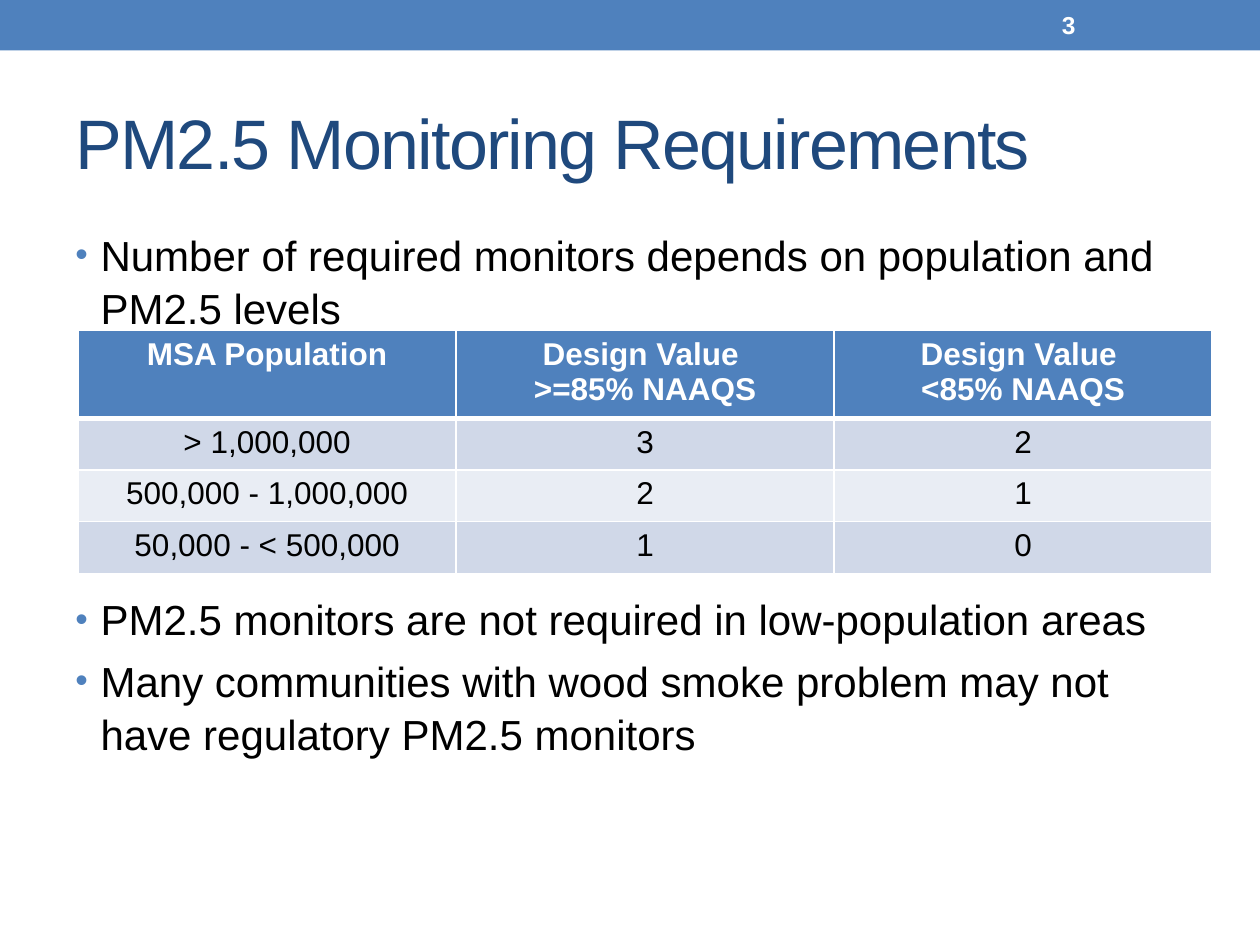
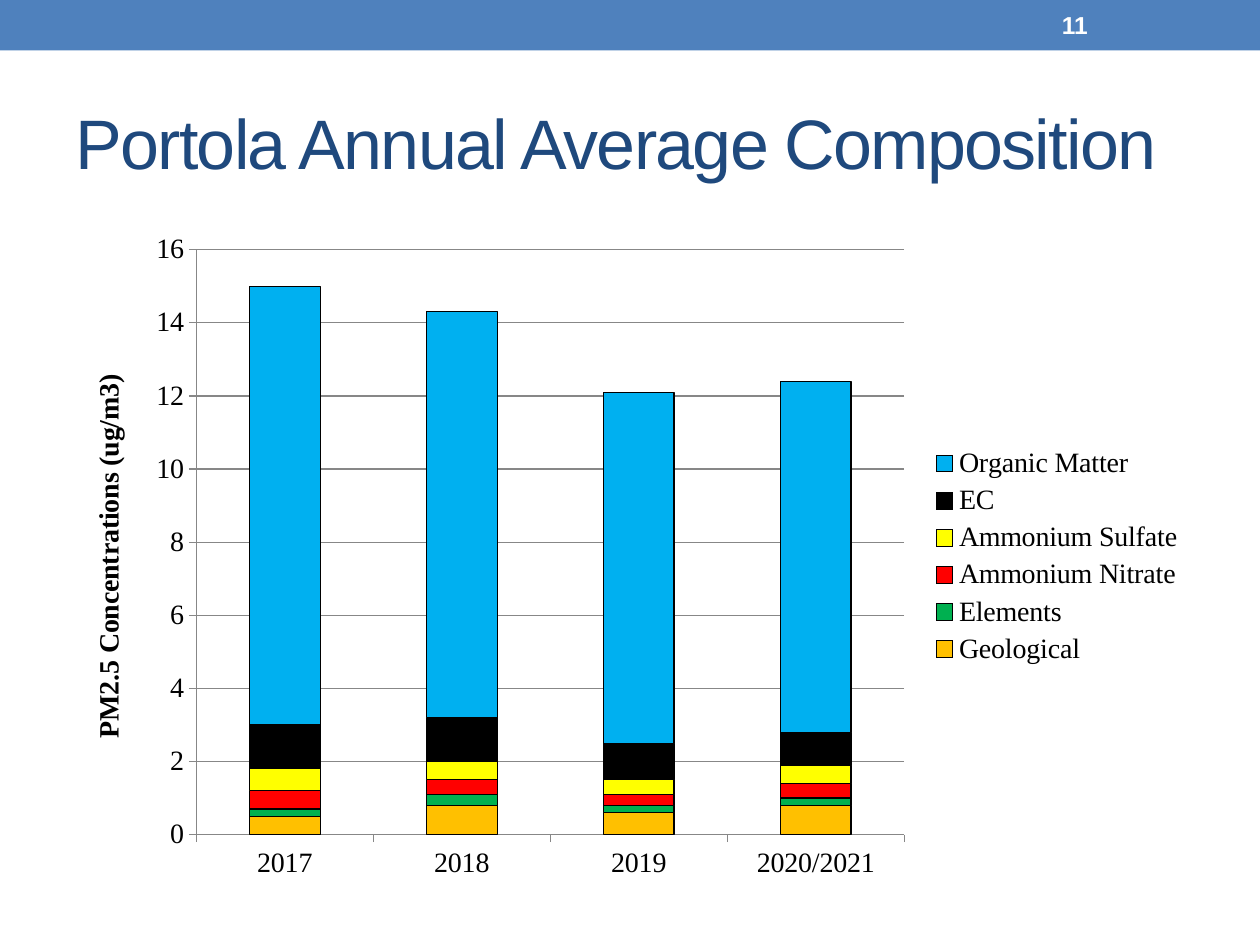
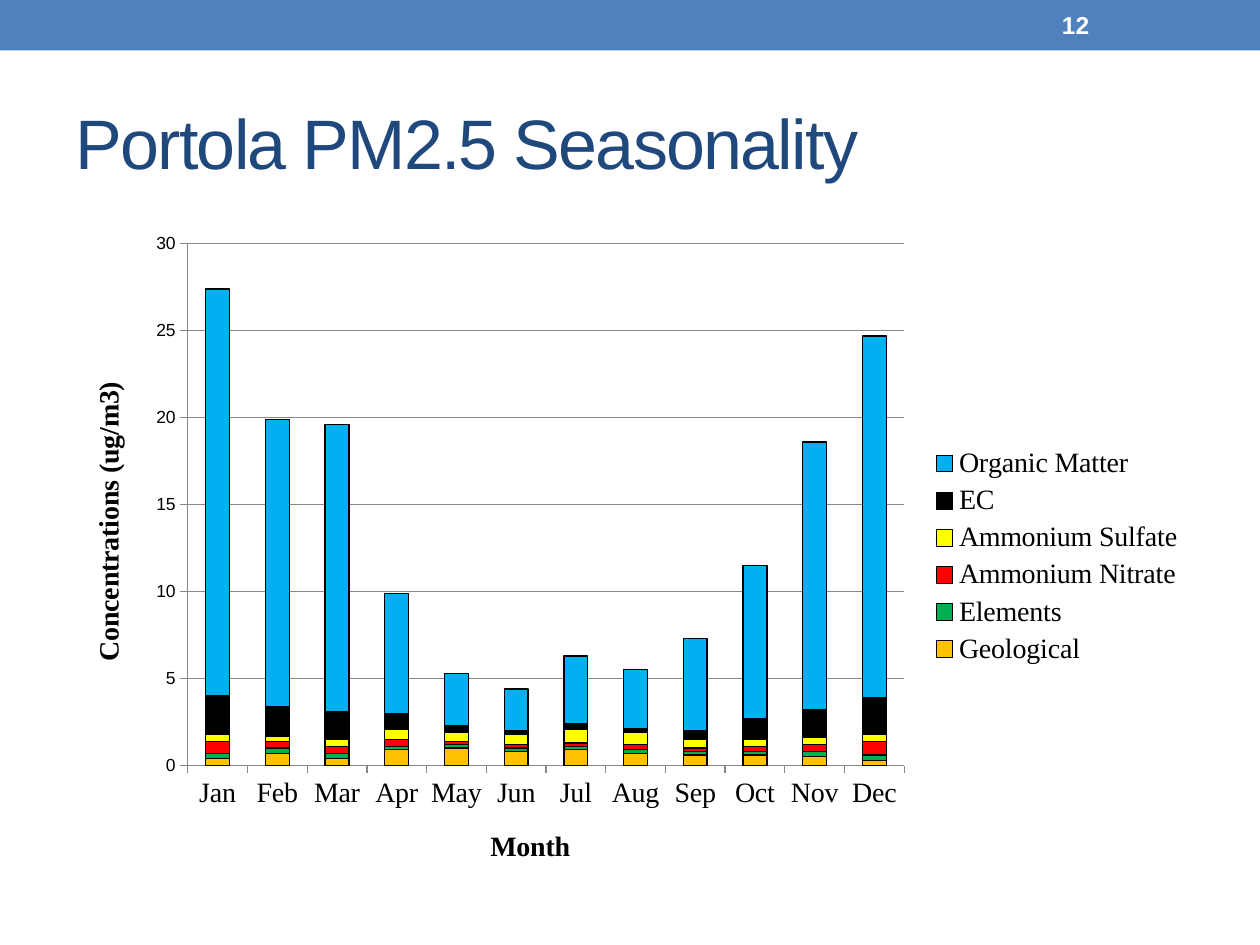
"""Build three slides on PM2.5 monitoring and its composition in Portola."""
from lxml import etree
from pptx import Presentation
from pptx import util as u
from pptx.chart import data
from pptx.dml import color
from pptx.enum import chart as charts
from pptx.enum import shapes, text
from pptx.oxml import ns

PX = 9144
BLUE, NAVY, BLACK, WHITE, GRAY = "4F81BD", "1F497D", "000000", "FFFFFF", "878787"
ROW_FILLS = ["D0D8E8", "E9EDF4"]

TITLE_FONT = {"name": "Arial", "size": u.Pt(40), "bold": False}
BODY_FONT = {"name": "Arial", "size": u.Pt(24)}
NUMBER_FONT = {"name": "Arial", "size": u.Pt(14), "bold": True}
HEADER_FONT = {"name": "Arial", "size": u.Pt(18), "bold": True}
CELL_FONT = {"name": "Arial", "size": u.Pt(18), "bold": False}
CHART_FONT = {"name": "Arial", "size": u.Pt(10)}
SERIF_FONT = {"name": "Times New Roman", "size": u.Pt(16), "bold": False}
AXIS_TITLE_FONT = {**SERIF_FONT, "bold": True}

CONTENT = (50, 175, 900, 533)
SERIES = [
    ("Geological", "FFC000"),
    ("Elements", "00B050"),
    ("Ammonium Nitrate", "FF0000"),
    ("Ammonium Sulfate", "FFFF00"),
    ("EC", BLACK),
    ("Organic Matter", "00B0F0"),
]

BULLETS = [
    ("Number of required monitors depends on population and PM2.5 levels", 4.8),
    ("PM2.5 monitors are not required in low-population areas", 148),
    ("Many communities with wood smoke problem may not have regulatory PM2.5 monitors", 4.8),
]
MONITORS = [
    ["MSA Population", "Design Value \v>=85% NAAQS", "Design Value \v<85% NAAQS"],
    ["> 1,000,000", "3", "2"],
    ["500,000 - 1,000,000", "2", "1"],
    ["50,000 - < 500,000", "1", "0"],
]
YEARS = ["2017", "2018", "2019", "2020/2021"]
YEARLY = [
    [0.5, 0.8, 0.6, 0.8],
    [0.2, 0.3, 0.2, 0.2],
    [0.5, 0.4, 0.3, 0.4],
    [0.6, 0.5, 0.4, 0.5],
    [1.2, 1.2, 1, 0.9],
    [12, 11.1, 9.6, 9.6],
]
MONTHS = "Jan Feb Mar Apr May Jun Jul Aug Sep Oct Nov Dec".split()
MONTHLY = [
    [0.4, 0.7, 0.4, 0.9, 1, 0.8, 0.9, 0.7, 0.6, 0.6, 0.5, 0.3],
    [0.3, 0.3, 0.3, 0.2, 0.2, 0.2, 0.2, 0.2, 0.2, 0.2, 0.3, 0.3],
    [0.7, 0.4, 0.4, 0.4, 0.2, 0.2, 0.2, 0.3, 0.2, 0.3, 0.4, 0.8],
    [0.4, 0.3, 0.4, 0.6, 0.5, 0.6, 0.8, 0.7, 0.5, 0.4, 0.4, 0.4],
    [2.2, 1.7, 1.6, 0.9, 0.4, 0.2, 0.3, 0.2, 0.5, 1.2, 1.6, 2.1],
    [23.4, 16.5, 16.5, 6.9, 3, 2.4, 3.9, 3.4, 5.3, 8.8, 15.4, 20.8],
]


def px(*lengths):
    return [u.Emu(length * PX) for length in lengths]


def rgb(value):
    return color.RGBColor.from_string(value)


def apply(target, values):
    for name, value in values.items():
        setattr(target, name, value)


def set_font(font, values, tint=BLACK):
    apply(font, values)
    font.color.rgb = rgb(tint)


def paint(fill, tint):
    fill.solid()
    fill.fore_color.rgb = rgb(tint)


def draw_line(line, tint, width):
    line.color.rgb = rgb(tint)
    line.width = u.Pt(width)


def add_node(parent, tag, **attributes):
    return etree.SubElement(parent, ns.qn(tag), attributes)


class Builder:
    def __init__(self):
        self.deck = Presentation()
        self.deck.slide_width, self.deck.slide_height = px(1000, 750)
        self.page = None

    def start_page(self, heading, number):
        self.page = self.deck.slides.add_slide(self.deck.slide_layouts[5])
        self.band()
        self.title(heading)
        self.number(number)

    def band(self):
        band = self.page.shapes.add_shape(shapes.MSO_SHAPE.RECTANGLE, *px(0, 0, 1000, 40))
        band.shadow.inherit = False
        paint(band.fill, BLUE)
        band.line.fill.background()

    def title(self, heading):
        box = self.page.shapes.title
        apply(box, dict(zip(("left", "top", "width", "height"), px(50, 58, 900, 108))))
        frame = box.text_frame
        frame.text = heading
        apply(frame, {"vertical_anchor": text.MSO_ANCHOR.MIDDLE,
                      "auto_size": text.MSO_AUTO_SIZE.NONE, "word_wrap": True})
        para = frame.paragraphs[0]
        para.alignment = text.PP_ALIGN.LEFT
        span = para.runs[0]
        set_font(span.font, TITLE_FONT, NAVY)
        span.font._element.set("spc", "-100")

    def text_box(self, place, anchor):
        frame = self.page.shapes.add_textbox(*px(*place)).text_frame
        apply(frame, {"word_wrap": True, "vertical_anchor": anchor})
        return frame

    def number(self, number):
        frame = self.text_box((833, 2, 117, 36), text.MSO_ANCHOR.MIDDLE)
        frame.text = str(number)
        set_font(frame.paragraphs[0].runs[0].font, NUMBER_FONT, WHITE)

    def bullets(self, place, items):
        frame = self.text_box(place, text.MSO_ANCHOR.TOP)
        for index, (words, gap) in enumerate(items):
            para = frame.add_paragraph() if index else frame.paragraphs[0]
            apply(para, {"space_before": u.Pt(gap), "line_spacing": 1.05})
            span = para.add_run()
            span.text = words
            set_font(span.font, BODY_FONT)
            marks = para._p.get_or_add_pPr()
            marks.set("marL", str(20 * PX))
            marks.set("indent", str(-20 * PX))
            add_node(add_node(marks, "a:buClr"), "a:srgbClr", val=BLUE)
            add_node(marks, "a:buSzPct", val="85000")
            add_node(marks, "a:buFont", typeface="Arial")
            add_node(marks, "a:buChar", char="•")

    def borders(self, cell, widths):
        marks = cell._tc.get_or_add_tcPr()
        for index, (side, width) in enumerate(zip("LRTB", widths)):
            edge = etree.Element(ns.qn(f"a:ln{side}"), w=str(u.Pt(width)))
            add_node(add_node(edge, "a:solidFill"), "a:srgbClr", val=WHITE)
            marks.insert(index, edge)

    def table(self, place, rows, heights):
        grid = self.page.shapes.add_table(len(rows), len(rows[0]), *px(*place)).table
        for r, (row, height) in enumerate(zip(rows, heights)):
            grid.rows[r].height = px(height)[0]
            for c, words in enumerate(row):
                cell = grid.cell(r, c)
                cell.text = words
                para = cell.text_frame.paragraphs[0]
                para.alignment = text.PP_ALIGN.CENTER
                font, tint = (CELL_FONT, BLACK) if r else (HEADER_FONT, WHITE)
                for span in para.runs:
                    set_font(span.font, font, tint)
                paint(cell.fill, ROW_FILLS[(r - 1) % 2] if r else BLUE)
                self.borders(cell, (1, 1, 3 if r == 1 else 1, 1 if r else 3))

    def axis(self, axis, font, heading):
        axis.major_tick_mark = charts.XL_TICK_MARK.OUTSIDE
        axis.minor_tick_mark = charts.XL_TICK_MARK.NONE
        draw_line(axis.format.line, GRAY, 0.75)
        set_font(axis.tick_labels.font, font)
        axis.has_title = bool(heading)
        if heading:
            frame = axis.axis_title.text_frame
            frame.text = heading
            set_font(frame.paragraphs[0].runs[0].font, AXIS_TITLE_FONT)

    def stacked_chart(self, categories, rows, scale, value_title, value_font, category_title=None):
        source = data.CategoryChartData()
        source.categories = categories
        for (name, _), values in zip(SERIES, rows):
            source.add_series(name, values)
        chart = self.page.shapes.add_chart(
            charts.XL_CHART_TYPE.COLUMN_STACKED, *px(*CONTENT), source).chart
        set_font(chart.font, CHART_FONT)
        apply(chart, {"has_title": False, "has_legend": True})
        apply(chart.legend, {"position": charts.XL_LEGEND_POSITION.RIGHT,
                             "include_in_layout": False})
        set_font(chart.legend.font, SERIF_FONT)
        plot = chart.plots[0]
        apply(plot, {"gap_width": 150, "overlap": 100, "vary_by_categories": False})
        for series, (_, tint) in zip(plot.series, SERIES):
            paint(series.format.fill, tint)
            draw_line(series.format.line, BLACK, 0.75)
        self.axis(chart.category_axis, SERIF_FONT, category_title)
        self.axis(chart.value_axis, value_font, value_title)
        top, step = scale
        apply(chart.value_axis, {"minimum_scale": 0, "maximum_scale": top,
                                 "major_unit": step, "has_major_gridlines": True})
        draw_line(chart.value_axis.major_gridlines.format.line, GRAY, 0.75)


def main():
    builder = Builder()

    builder.start_page("PM2.5 Monitoring Requirements", 3)
    builder.bullets(CONTENT, BULLETS)
    builder.table((62, 262, 900, 188), MONITORS, [65, 41, 41, 41])

    builder.start_page("Portola Annual Average Composition", 11)
    builder.stacked_chart(YEARS, YEARLY, (16, 2), "PM2.5 Concentrations (ug/m3)", SERIF_FONT)

    builder.start_page("Portola PM2.5 Seasonality", 12)
    builder.stacked_chart(MONTHS, MONTHLY, (30, 5), "Concentrations (ug/m3)", CHART_FONT, "Month")

    builder.deck.save("out.pptx")


if __name__ == "__main__":
    main()
